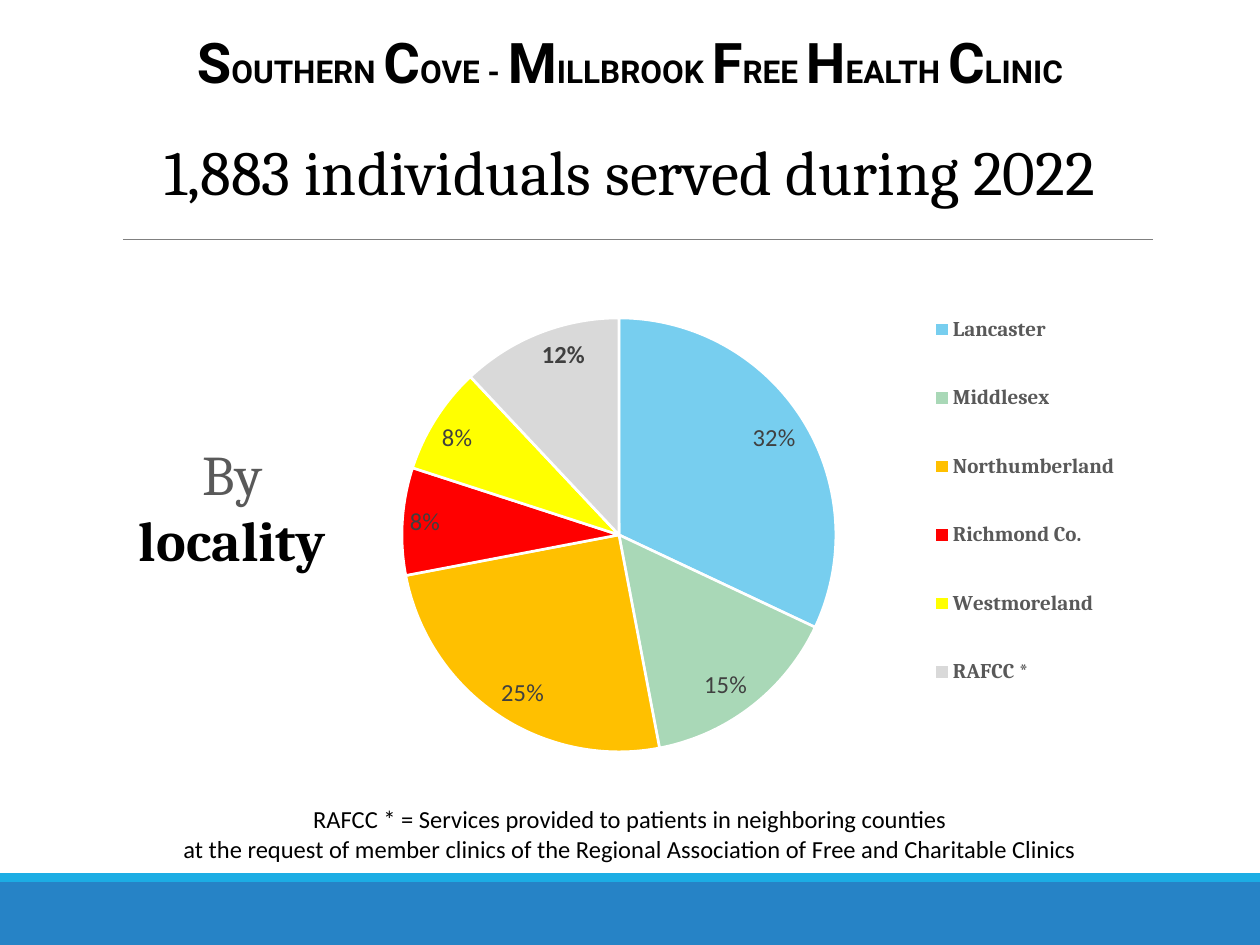
from lxml.etree import SubElement
from pptx import Presentation
from pptx.chart.data import CategoryChartData
from pptx.dml.color import RGBColor
from pptx.enum.chart import XL_CHART_TYPE as ChartType
from pptx.enum.chart import XL_LABEL_POSITION as LabelPosition
from pptx.enum.chart import XL_LEGEND_POSITION as LegendPosition
from pptx.enum.shapes import MSO_CONNECTOR as Connector
from pptx.enum.shapes import MSO_SHAPE as Shape
from pptx.enum.text import MSO_ANCHOR as Anchor
from pptx.enum.text import PP_ALIGN as Align
from pptx.oxml import parse_xml
from pptx.oxml.ns import nsdecls, qn
from pptx.util import Emu, Pt

PX_PER_INCH = 126
BLACK = RGBColor(0x00, 0x00, 0x00)
WHITE = RGBColor(0xFF, 0xFF, 0xFF)
GRAY = RGBColor(0x59, 0x59, 0x59)
LABEL_GRAY = RGBColor(0x40, 0x40, 0x40)
RULE_GRAY = RGBColor(0x80, 0x80, 0x80)
BLUE = RGBColor(0x26, 0x83, 0xC6)
CYAN = RGBColor(0x1C, 0xAD, 0xE4)

CLINIC_WORDS = ("SOUTHERN ", "COVE - ", "MILLBROOK ", "FREE ", "HEALTH ", "CLINIC")
FOOTNOTE = (
    "RAFCC * = Services provided to patients in neighboring counties",
    "at the request of member clinics of the Regional Association of Free and Charitable Clinics",
)
# Locality, percent share, slice colour
LOCALITIES = (
    ("Lancaster", 32, RGBColor(0x77, 0xCE, 0xEF)),
    ("Middlesex", 15, RGBColor(0xA9, 0xD8, 0xB7)),
    ("Northumberland", 25, RGBColor(0xFF, 0xC0, 0x00)),
    ("Richmond Co.", 8, RGBColor(0xFF, 0x00, 0x00)),
    ("Westmoreland", 8, RGBColor(0xFF, 0xFF, 0x00)),
    ("RAFCC *", 12, RGBColor(0xD9, 0xD9, 0xD9)),
)
CHART_BOX = (95, 215, 1124, 601)


def px(*lengths):
    return [Emu(round(length * 914400 / PX_PER_INCH)) for length in lengths]


def set_font(font, color=BLACK, **values):
    for name, value in values.items():
        setattr(font, name, value)
    font.color.rgb = color


def add_span(para, text, **style):
    span = para.add_run()
    span.text = text
    set_font(span.font, **style)


def add_text_box(page, box):
    frame = page.shapes.add_textbox(*px(*box)).text_frame
    frame.word_wrap = True
    return frame


def add_band(page, box, color):
    band = page.shapes.add_shape(Shape.RECTANGLE, *px(*box))
    band.shadow.inherit = False
    band.fill.solid()
    band.fill.fore_color.rgb = color
    band.line.fill.background()


def add_rule(page, left, right, y):
    rule = page.shapes.add_connector(Connector.STRAIGHT, *px(left, y, right, y))
    rule.line.color.rgb = RULE_GRAY
    rule.line.width = Pt(0.5)
    SubElement(rule.element.spPr, qn("a:effectLst"))


def add_clinic_name(page):
    """Small capitals: a large initial, then smaller letters."""
    para = add_text_box(page, (0, 21, 1260, 81)).paragraphs[0]
    para.alignment = Align.CENTER
    for word in CLINIC_WORDS:
        for text, size in ((word[0], 32), (word[1:], 18)):
            add_span(para, text, name="Roboto", size=Pt(size), bold=True)


def add_headline(page):
    title = page.shapes.title
    title.left, title.top, title.width, title.height = px(0, 126, 1260, 89)
    frame = title.text_frame
    frame.vertical_anchor = Anchor.MIDDLE
    para = frame.paragraphs[0]
    para.alignment = Align.CENTER
    add_span(para, "1,883 individuals served during 2022", name="Cambria", size=Pt(36))


def add_footnote(page):
    frame = add_text_box(page, (73, 798, 1114, 72))
    for number, line in enumerate(FOOTNOTE):
        para = frame.add_paragraph() if number else frame.paragraphs[0]
        para.alignment = Align.CENTER
        add_span(para, line, name="Calibri", size=Pt(14))


def place(element, index, box, **modes):
    """Fix a chart part at px lengths inside the chart area."""
    for old in element.findall(qn("c:layout")):
        element.remove(old)
    layout = parse_xml(f"<c:layout {nsdecls('c')}><c:manualLayout/></c:layout>")
    sizes = CHART_BOX[2:] * 2
    fractions = {name: length / size for name, length, size in zip("xywh", box, sizes)}
    values = {**modes, "xMode": "edge", "yMode": "edge", **fractions}
    for name, value in values.items():
        SubElement(layout[0], qn(f"c:{name}")).set("val", str(value))
    element.insert(index, layout)


def style_slices(series):
    labels = series.data_labels
    labels.show_percentage, labels.show_value = True, False
    labels.position = LabelPosition.INSIDE_END
    set_font(labels.font, LABEL_GRAY, name="Calibri", size=Pt(14), bold=True)
    for index, (_, share, color) in enumerate(LOCALITIES):
        point = series.points[index]
        point.format.fill.solid()
        point.format.fill.fore_color.rgb = color
        point.format.line.color.rgb = WHITE
        point.format.line.width = Pt(1.5)
        label = point.data_label
        add_span(label.text_frame.paragraphs[0], f"{share}%", color=LABEL_GRAY,
                 name="Calibri", size=Pt(14), bold=index == len(LOCALITIES) - 1)
        label.position = LabelPosition.INSIDE_END


def add_locality_chart(page):
    data = CategoryChartData()
    data.categories = [name for name, _, _ in LOCALITIES]
    data.add_series("Series 1", [share for _, share, _ in LOCALITIES])
    chart = page.shapes.add_chart(ChartType.PIE, *px(*CHART_BOX), data).chart
    set_font(chart.font, name="Calibri", size=Pt(10))
    chart.plots[0].vary_by_categories = True
    style_slices(chart.plots[0].series[0])

    # Title beside the pie
    chart.has_title = True
    frame = chart.chart_title.text_frame
    add_span(frame.paragraphs[0], "By", color=GRAY, name="Cambria", size=Pt(32), bold=False)
    add_span(frame.add_paragraph(), "locality", name="Cambria", size=Pt(32), bold=True)
    chart.chart_title.include_in_layout = False

    # Legend down the right side
    chart.has_legend = True
    legend = chart.legend
    legend.position = LegendPosition.RIGHT
    legend.include_in_layout = False
    set_font(legend.font, GRAY, name="Cambria", size=Pt(12), bold=True)

    place(chart.chart_title._element, 1, (40, 223))
    place(legend._element, 1, (795, 58, 270, 456))
    place(chart._chartSpace.chart.plotArea, 0, (244, 103, 560, 434), layoutTarget="inner")


def main():
    deck = Presentation()
    deck.slide_width, deck.slide_height = px(1260, 945)
    page = deck.slides.add_slide(deck.slide_layouts[5])

    # Bands and rule
    add_band(page, (0, 882, 1260, 63), BLUE)
    add_band(page, (0, 873, 1260, 9), CYAN)
    add_rule(page, 123, 1153, 239)

    # Content
    add_clinic_name(page)
    add_locality_chart(page)
    add_headline(page)
    add_footnote(page)
    deck.save("out.pptx")


if __name__ == "__main__":
    main()
